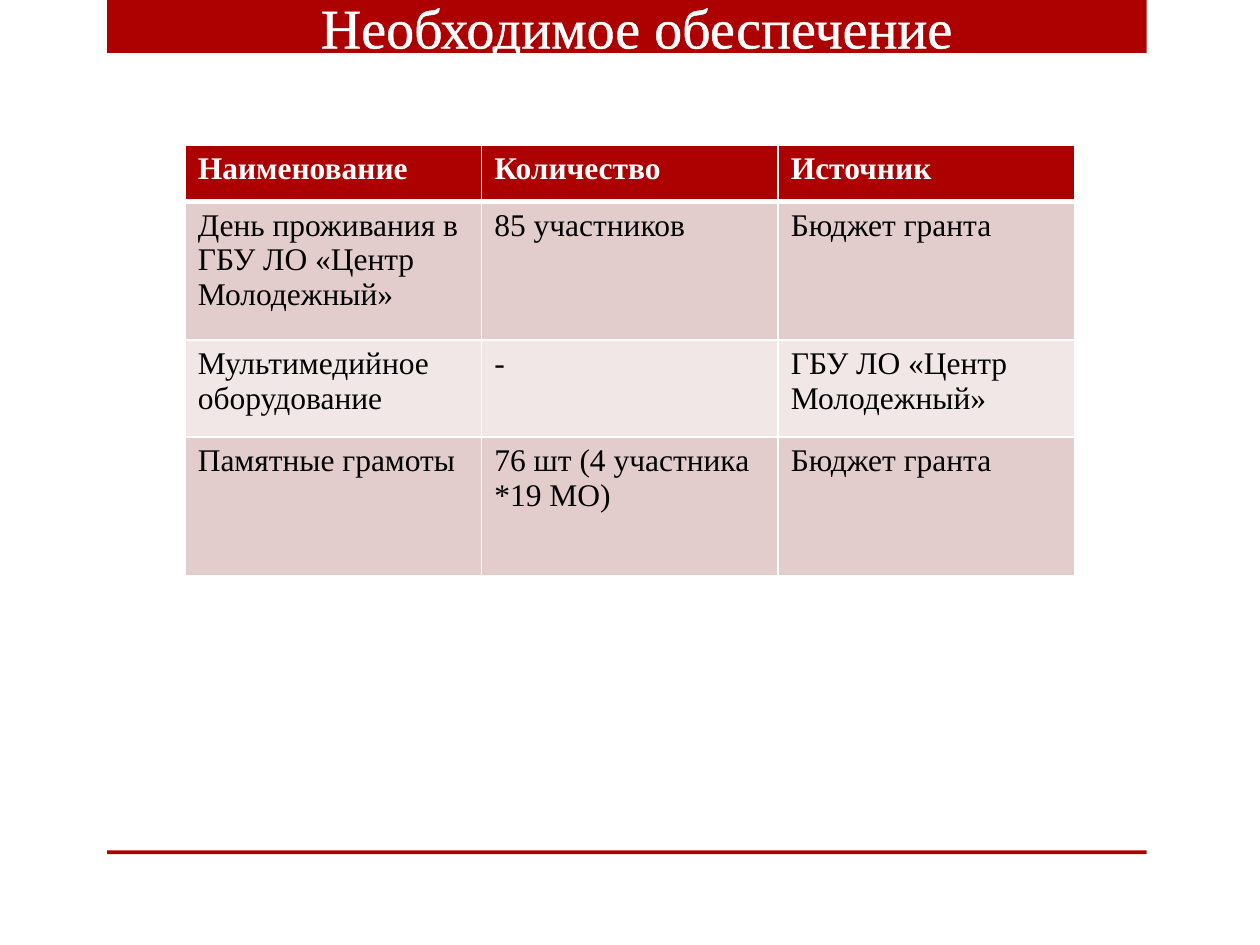
from typing import NamedTuple

from lxml import etree
from pptx import Presentation
from pptx import util as u
from pptx.dml.color import RGBColor
from pptx.enum import shapes, text
from pptx.oxml import ns

RED, WHITE, BLACK = "AD0101", "FFFFFF", "000000"
DARK_BAND, LIGHT_BAND = "E3CCCC", "F1E7E7"
FONT = "Times New Roman"


class Bar(NamedTuple):
    top: float
    height: float


class SupplyRow(NamedTuple):
    height: float
    name: str
    quantity: str
    source: str


BARS = [Bar(0, 0.42), Bar(6.75, 0.03)]
ROWS = [
    SupplyRow(0.45, "Наименование", "Количество", "Источник"),
    SupplyRow(1.1, "День проживания в ГБУ ЛО «Центр Молодежный»",
              "85 участников", "Бюджет гранта"),
    SupplyRow(0.77, "Мультимедийное оборудование", "-",
              "ГБУ ЛО «Центр Молодежный»"),
    SupplyRow(1.1, "Памятные грамоты", "76 шт (4 участника *19 МО)",
              "Бюджет гранта"),
]


def rgb(color: str) -> RGBColor:
    return RGBColor.from_string(color)


def add_line(parent, tag: str, color: str, points: float):
    """Append a solid line element, used for cell borders and letter outlines."""
    line = etree.SubElement(parent, ns.qn(tag), w=str(u.Pt(points)))
    fill = etree.SubElement(line, ns.qn("a:solidFill"))
    etree.SubElement(fill, ns.qn("a:srgbClr"), val=color)
    return line


def write(frame, words: str, *, size: float, color: str, bold: bool = False,
          align=text.PP_ALIGN.LEFT):
    paragraph = frame.paragraphs[0]
    paragraph.alignment = align
    run = paragraph.add_run()
    run.text = words
    run.font.name = FONT
    run.font.size = u.Pt(size)
    run.font.bold = bold
    run.font.color.rgb = rgb(color)
    return run


def draw_bar(slide, bar: Bar) -> None:
    rect = slide.shapes.add_shape(
        shapes.MSO_SHAPE.RECTANGLE, u.Inches(0.85), u.Inches(bar.top),
        u.Inches(8.25), u.Inches(bar.height))
    rect.shadow.inherit = False
    rect.fill.solid()
    rect.fill.fore_color.rgb = rgb(RED)
    rect.line.fill.background()


def draw_title(slide, words: str) -> None:
    title = slide.shapes.title
    title.left, title.top = u.Inches(2.31), u.Inches(-0.11)
    title.width, title.height = u.Inches(5.38), u.Inches(0.64)
    frame = title.text_frame
    frame.word_wrap = False
    frame.auto_size = text.MSO_AUTO_SIZE.NONE
    frame.vertical_anchor = text.MSO_ANCHOR.TOP
    run = write(frame, words, size=32, color=WHITE, align=text.PP_ALIGN.CENTER)
    properties = run.font.fill._xPr
    properties.insert(0, add_line(properties, "a:ln", WHITE, 1.45))
    # Bring the title in front of the red bar
    slide.shapes.element.append(title.element)


def draw_table(slide, rows: list[SupplyRow]) -> None:
    table = slide.shapes.add_table(
        len(rows), 3, u.Inches(1.47), u.Inches(1.15), u.Inches(7.06),
        u.Inches(sum(row.height for row in rows))).table
    for column in table.columns:
        column.width = u.Inches(7.06 / 3)
    for i, row in enumerate(rows):
        header = i == 0
        fill = RED if header else DARK_BAND if i % 2 else LIGHT_BAND
        table.rows[i].height = u.Inches(row.height)
        for j, words in enumerate(row[1:]):
            cell = table.cell(i, j)
            write(cell.text_frame, words, size=18, bold=header,
                  color=WHITE if header else BLACK)
            properties = cell._tc.get_or_add_tcPr()
            for side in "LRTB":
                thick = (header and side == "B") or (i == 1 and side == "T")
                add_line(properties, f"a:ln{side}", WHITE, 3 if thick else 1)
            cell.fill.solid()
            cell.fill.fore_color.rgb = rgb(fill)


def main() -> None:
    deck = Presentation()
    deck.slide_width, deck.slide_height = u.Inches(10), u.Inches(7.5)
    slide = deck.slides.add_slide(deck.slide_layouts[5])

    # Red bars at the top and bottom
    for bar in BARS:
        draw_bar(slide, bar)

    # Heading and table of supplies
    draw_title(slide, " Необходимое обеспечение")
    draw_table(slide, ROWS)
    deck.save("out.pptx")


if __name__ == "__main__":
    main()
